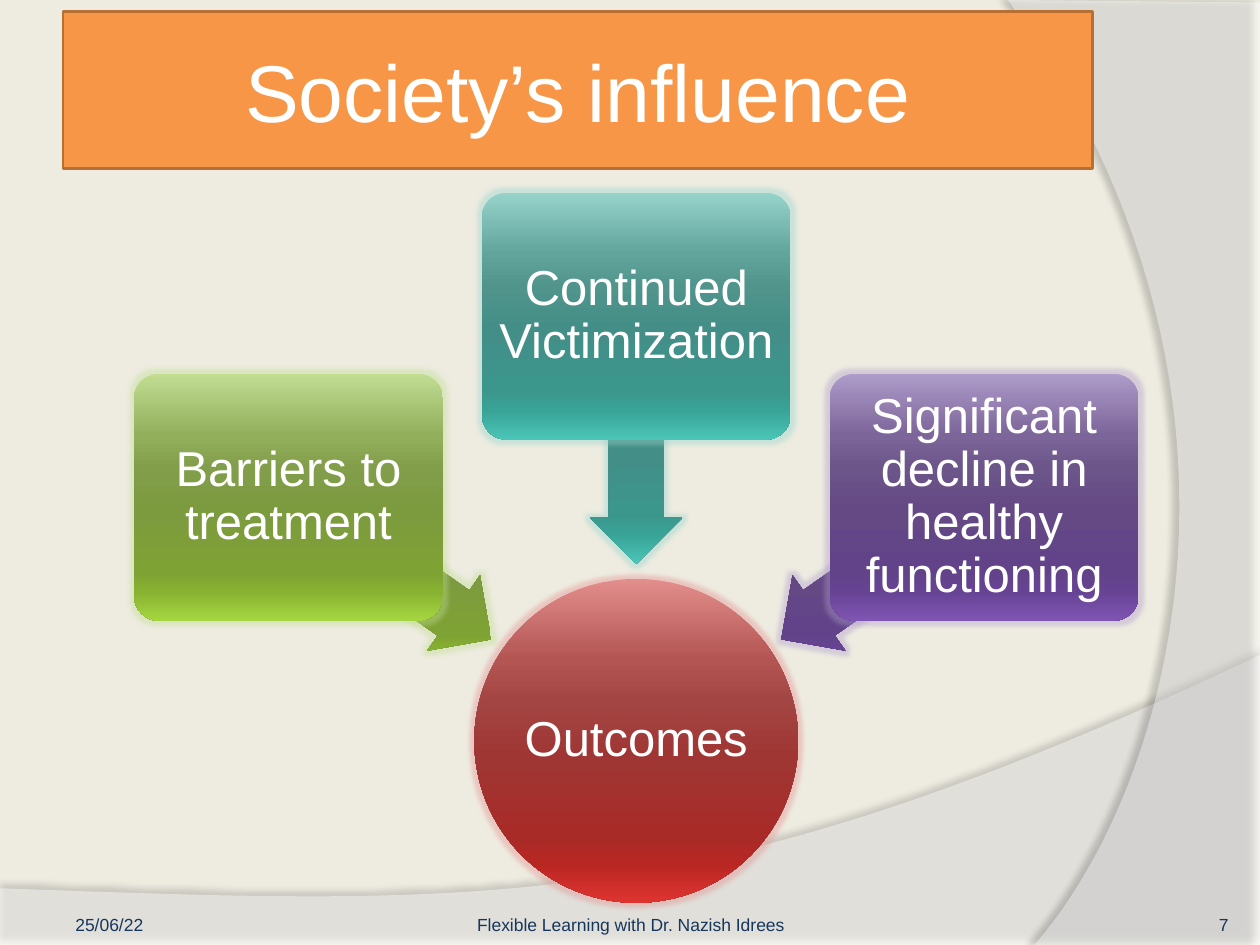
"""Builds the slide on society's influence, with three causes around one hub."""
import math
import pptx
import pptx.util
import pptx.dml.color
import pptx.enum.shapes
import pptx.enum.text
import pptx.oxml.ns
from lxml import etree

KIND = pptx.enum.shapes.MSO_SHAPE
ALIGN = pptx.enum.text.PP_ALIGN
ANCHOR = pptx.enum.text.MSO_ANCHOR
COLS, ROWS = 10, 7.5
HEX = {"back": "EEECE1", "white": "FFFFFF", "black": "000000",
       "title": "F79646", "edge": "B76F34", "foot": "17365C"}
STOPS = (0, 25, 38, 55, 80, 88, 100)
RAMPS = {
    "red": "E28E8C B35553 A34543 9F3633 A92B28 B92723 DF3430",
    "green": "C0DD92 92AF5C 829E4B 7C9A3E 7EA234 87B131 A5D640",
    "teal": "96D3CB 60A49C 50948C 438F87 3B968C 39A397 4AC5B7",
    "plum": "AD9BC9 7C6599 6C5589 644984 624389 674394 7F55B3",
}


def rgb(name):
    return pptx.dml.color.RGBColor.from_string(HEX[name])


def node(parent, tag, **attrs):
    return etree.SubElement(parent, pptx.oxml.ns.qn("a:" + tag),
                            {key: str(val) for key, val in attrs.items()})


def tint(parent, color, alpha):
    node(node(parent, "srgbClr", val=color), "alpha", val=alpha * 1000)


def curve(start, first, second, end, count=48):
    dots = []
    for i in range(1, count + 1):
        t = i / count
        mix = ((1 - t) ** 3, 3 * t * (1 - t) ** 2, 3 * t * t * (1 - t), t ** 3)
        dots.append(tuple(sum(m * p[k] for m, p in zip(mix, (start, first, second, end)))
                          for k in (0, 1)))
    return dots


class Deck:
    """Holds the style, the grid and the current slide."""

    font = "Arial"

    def __init__(self):
        self.file = pptx.Presentation()
        self.file.slide_width = pptx.util.Inches(10)
        self.file.slide_height = pptx.util.Inches(7.5)
        self.cell = self.file.slide_width / COLS
        self.slide = self.file.slides.add_slide(self.file.slide_layouts[5])
        self.slide.background.fill.solid()
        self.slide.background.fill.fore_color.rgb = rgb("back")

    def span(self, *sizes):
        return [round(size * self.cell) for size in sizes]

    def words(self, shape, text, size, color, align, anchor, pads):
        frame = shape.text_frame
        frame.text = text
        frame.word_wrap = True
        frame.auto_size = pptx.enum.text.MSO_AUTO_SIZE.NONE
        frame.vertical_anchor = anchor
        (frame.margin_left, frame.margin_top,
         frame.margin_right, frame.margin_bottom) = self.span(*pads)
        para = frame.paragraphs[0]
        para.alignment = align
        font = para.runs[0].font
        font.name, font.size = self.font, pptx.util.Pt(size)
        font.color.rgb = rgb(color)
        return para

    def title(self, text, *box):
        shape = self.slide.shapes.title
        shape.left, shape.top, shape.width, shape.height = self.span(*box)
        shape.fill.solid()
        shape.fill.fore_color.rgb = rgb("title")
        shape.line.color.rgb = rgb("edge")
        shape.line.width = pptx.util.Pt(1.5)
        self.words(shape, text, 46, "white", ALIGN.CENTER, ANCHOR.MIDDLE, [0.05] * 4)

    def swoosh(self, dots, alpha, shade, dist, turn, level):
        dots = [self.span(*dot) for dot in dots]
        pen = self.slide.shapes.build_freeform(*dots[0], scale=1.0)
        pen.add_line_segments(dots[1:], close=True)
        shape = pen.convert_to_shape()
        shape.shadow.inherit = False
        shape.fill.solid()
        shape.fill.fore_color.rgb = rgb("white")
        shape.line.fill.background()
        props = shape.element.spPr
        node(props.find(".//" + pptx.oxml.ns.qn("a:srgbClr")), "alpha", val=alpha * 1000)
        drop = node(props.find(pptx.oxml.ns.qn("a:effectLst")), "outerShdw",
                    blurRad=pptx.util.Pt(4), dist=pptx.util.Pt(dist),
                    dir=turn * 60000, algn="ctr", rotWithShape=0)
        tint(drop, HEX["black"], shade)
        shape.element.getparent().insert(2 + level, shape.element)

    def gloss(self, kind, ramp, x, y, wide, high, turn=0):
        box = self.span(x - wide / 2, y - high / 2, wide, high)
        shape = self.slide.shapes.add_shape(kind, *box)
        shape.rotation = turn
        shape.shadow.inherit = False
        shape.line.fill.background()
        shape.fill.gradient()
        shape.fill.gradient_angle = 270
        props = shape.element.spPr
        props.find(pptx.oxml.ns.qn("a:gradFill")).set("rotWithShape", "0")
        stops = props.find(".//" + pptx.oxml.ns.qn("a:gsLst"))
        stops.clear()
        colors = RAMPS[ramp].split()
        for place, color in zip(STOPS, colors):
            node(node(stops, "gs", pos=place * 1000), "srgbClr", val=color)
        glow = node(props.find(pptx.oxml.ns.qn("a:effectLst")), "glow",
                    rad=pptx.util.Pt(5))
        tint(glow, colors[0], 40)
        return shape

    def label(self, shape, text, pad):
        para = self.words(shape, text, 28, "white", ALIGN.CENTER, ANCHOR.MIDDLE, [pad] * 4)
        para.line_spacing = 0.9

    def hub(self, text, x, y, size):
        self.label(self.gloss(KIND.OVAL, "red", x, y, size, size), text, 0.02)

    def cause(self, text, ramp, x, y, turn):
        way = math.radians(turn)
        spots = [(x + far * math.cos(way), y + far * math.sin(way)) for far in (2.39, 3.37)]
        arrow = self.gloss(KIND.LEFT_ARROW, ramp, *spots[0], 1.97, 0.73, turn + 180 - 180)
        arrow.adjustments[0], arrow.adjustments[1] = 0.6, 0.5
        box = self.gloss(KIND.ROUNDED_RECTANGLE, ramp, *spots[1], 2.45, 1.96)
        box.adjustments[0] = 0.1
        self.label(box, text, 0.06)

    def foot(self, text, x, wide, align, side, top):
        box = self.slide.shapes.add_textbox(*self.span(x, 7.02, wide, 0.4))
        self.words(box, text, 10, "foot", align, ANCHOR.BOTTOM, (side, top, side, 0))


def main():
    deck = Deck()
    wave = curve((10, 5.2), (5.59, 7.29), (3.91, 7.19), (0, 7.05))
    deck.swoosh([(0, 7.05), (0, ROWS), (COLS, ROWS), (10, 5.2)] + wave[:-1],
                45, 35, 3.5, 270, 0)
    bow = curve((8.21, ROWS), (9.35, 6.19), (10.18, 3), (8, 0))
    deck.swoosh([(COLS, 0.02), (COLS, ROWS), (8.21, ROWS)] + bow, 40, 45, 4, 180, 1)
    deck.title("Society’s influence", 0.5, 0.09, 8.17, 1.25)
    mid = (5.05, 5.88)
    deck.hub("Outcomes", *mid, 2.57)
    causes = (("Barriers to treatment", "green"), ("Continued Victimization", "teal"),
              ("Significant decline in healthy functioning", "plum"))
    for i, (text, ramp) in enumerate(causes):
        deck.cause(text, ramp, *mid, 215 + 55 * i)
    deck.foot("25/06/22", 0.5, 2.33, ALIGN.LEFT, 0.1, 0.05)
    deck.foot("Flexible Learning with Dr. Nazish Idrees", 3.42, 3.17, ALIGN.CENTER, 0, 0.05)
    deck.foot("7", 8.92, 0.83, ALIGN.RIGHT, 0, 0)
    deck.file.save("out.pptx")


if __name__ == "__main__":
    main()
